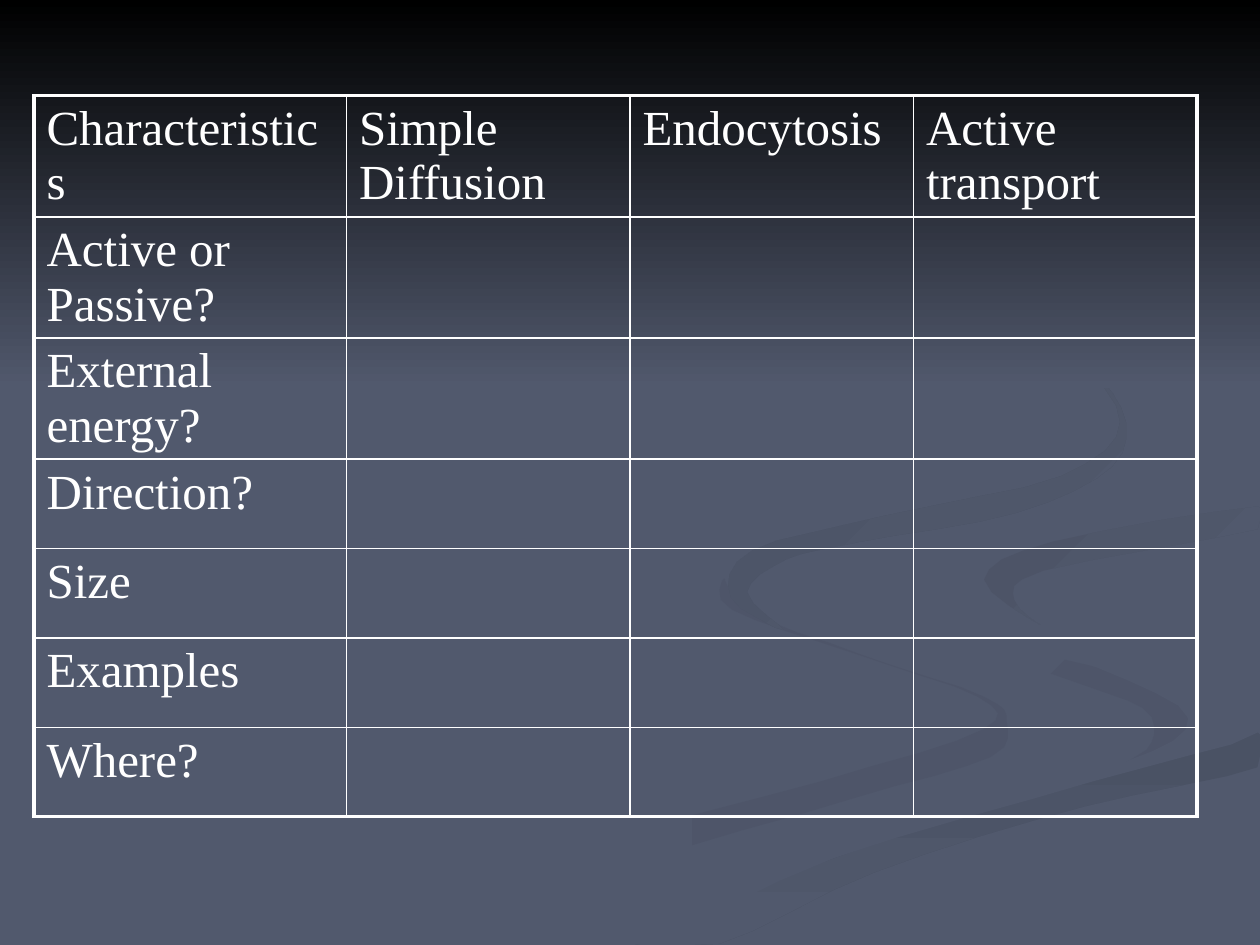
from pptx import Presentation
from pptx.dml.color import RGBColor
from pptx.enum.shapes import MSO_SHAPE as Shape
from pptx.oxml.ns import qn
from pptx.util import Inches, Pt
from lxml.etree import SubElement

COLORS = {
    "slate": "51596D", "black": "000000", "white": "FFFFFF",
    "trail": "4E5569", "foreground": "4A5264", "bend": "4D5467", "crest": "4B5365",
}
FONT = {"name": "Times New Roman", "size": Pt(28)}
THIN, THICK = Pt(1), Pt(2.25)
CURVE_STEPS = 4

# Each ribbon: first colour, last colour, clockwise angle, knots in hundredths of an inch
RIBBONS = [
    ("slate", "trail", 0, [
        (781, 553), (682, 519), (594, 485), (575, 459), (581, 484), (679, 519),
        (776, 553), (780, 579), (652, 620), (458, 674), (300, 749), (361, 749),
        (499, 687), (676, 634), (786, 601), (799, 573)]),
    ("slate", "trail", 45, [
        (943, 570), (905, 540), (811, 515), (745, 490), (724, 464), (746, 500),
        (838, 536), (907, 562), (914, 589), (894, 605), (932, 589)]),
    ("foreground", "slate", 90, [
        (503, 749), (571, 749), (695, 692), (861, 640), (998, 609), (998, 581),
        (867, 620), (696, 669), (569, 719)]),
    ("slate", "slate", 0, [
        (725, 464), (759, 498), (871, 530), (943, 570), (892, 605), (743, 643),
        (573, 703), (477, 749), (519, 747), (662, 681), (868, 620), (999, 581),
        (999, 538), (866, 509), (781, 463), (822, 434), (999, 402), (999, 387),
        (830, 415), (742, 439)]),
    ("bend", "slate", 45, [
        (781, 460), (826, 496), (805, 476), (828, 453), (998, 420), (998, 402),
        (835, 430)]),
    ("crest", "slate", 45, [
        (683, 430), (807, 407), (883, 370), (890, 324), (843, 275), (762, 233),
        (846, 279), (889, 335), (842, 378), (704, 409), (597, 437), (580, 474),
        (622, 500), (593, 470), (624, 444)]),
]
ROWS = [
    ["Characteristics", "Simple Diffusion", "Endocytosis", "Active transport"],
    ["Active or Passive?"], ["External energy?"], ["Direction?"],
    ["Size"], ["Examples"], ["Where?"],
]
COLUMN_WIDTHS = [2.48, 2.25, 2.25, 2.25]
ROW_HEIGHT = 0.71


def paint_gradient(shape, first, last, angle):
    """Fill a shape with two colours at a clockwise angle, without line or shadow."""
    shape.shadow.inherit = False
    shape.line.fill.background()
    shape.fill.gradient()
    shape.fill.gradient_angle = (360 - angle) % 360
    for stop, color, position in zip(shape.fill.gradient_stops, (first, last), (0, 1)):
        stop.color.rgb = RGBColor.from_string(COLORS[color])
        stop.position = position


def add_borders(cell, widths):
    properties = cell._tc.get_or_add_tcPr()
    for index, (side, width) in enumerate(widths.items()):
        line = SubElement(properties, qn(f"a:ln{side}"), w=str(int(width)))
        fill = SubElement(line, qn("a:solidFill"))
        SubElement(fill, qn("a:srgbClr"), val=COLORS["white"])
        properties.insert(index, line)


presentation = Presentation()
presentation.slide_width = Inches(10)
presentation.slide_height = Inches(7.5)
slide = presentation.slides.add_slide(presentation.slide_layouts[6])
background = slide.background.fill
background.solid()
background.fore_color.rgb = RGBColor.from_string(COLORS["slate"])

# Ribbons: a Catmull-Rom curve through the knots, kept inside the slide
for first, last, angle, knots in RIBBONS:
    outline = []
    for i in range(len(knots)):
        before, start, end, after = (knots[(i + k) % len(knots)] for k in (-1, 0, 1, 2))
        for step in range(CURVE_STEPS):
            t = step / CURVE_STEPS
            x, y = (
                b + t * (c - a) / 2 + t**2 * (2 * a - 5 * b + 4 * c - d) / 2
                + t**3 * (3 * b - a - 3 * c + d) / 2
                for a, b, c, d in zip(before, start, end, after))
            outline.append((min(x, 1000), min(y, 750)))
    builder = slide.shapes.build_freeform(*outline[0], scale=Inches(0.01))
    builder.add_line_segments(outline[1:], close=True)
    paint_gradient(builder.convert_to_shape(), first, last, angle)

# Dark sky
sky = slide.shapes.add_shape(Shape.RECTANGLE, 0, 0, Inches(10), Inches(3.08))
paint_gradient(sky, "black", "slate", 90)

# Comparison table
last_row, last_column = len(ROWS) - 1, len(COLUMN_WIDTHS) - 1
table = slide.shapes.add_table(
    len(ROWS), len(COLUMN_WIDTHS), Inches(0.27), Inches(0.76),
    Inches(sum(COLUMN_WIDTHS)), Inches(ROW_HEIGHT * len(ROWS))).table
table.first_row = table.horz_banding = False
for column, width in zip(table.columns, COLUMN_WIDTHS):
    column.width = Inches(width)

for r, labels in enumerate(ROWS):
    table.rows[r].height = Inches(ROW_HEIGHT)
    for c in range(len(COLUMN_WIDTHS)):
        cell = table.cell(r, c)
        cell.fill.background()
        add_borders(cell, {
            "L": THICK if c == 0 else THIN,
            "R": THICK if c == last_column else THIN,
            "T": THICK if r == 0 else THIN,
            "B": THICK if r == last_row else THIN,
        })
        if c < len(labels):
            run = cell.text_frame.paragraphs[0].add_run()
            run.text = labels[c]
            for name, value in FONT.items():
                setattr(run.font, name, value)
            run.font.color.rgb = RGBColor.from_string(COLORS["white"])

presentation.save("out.pptx")
